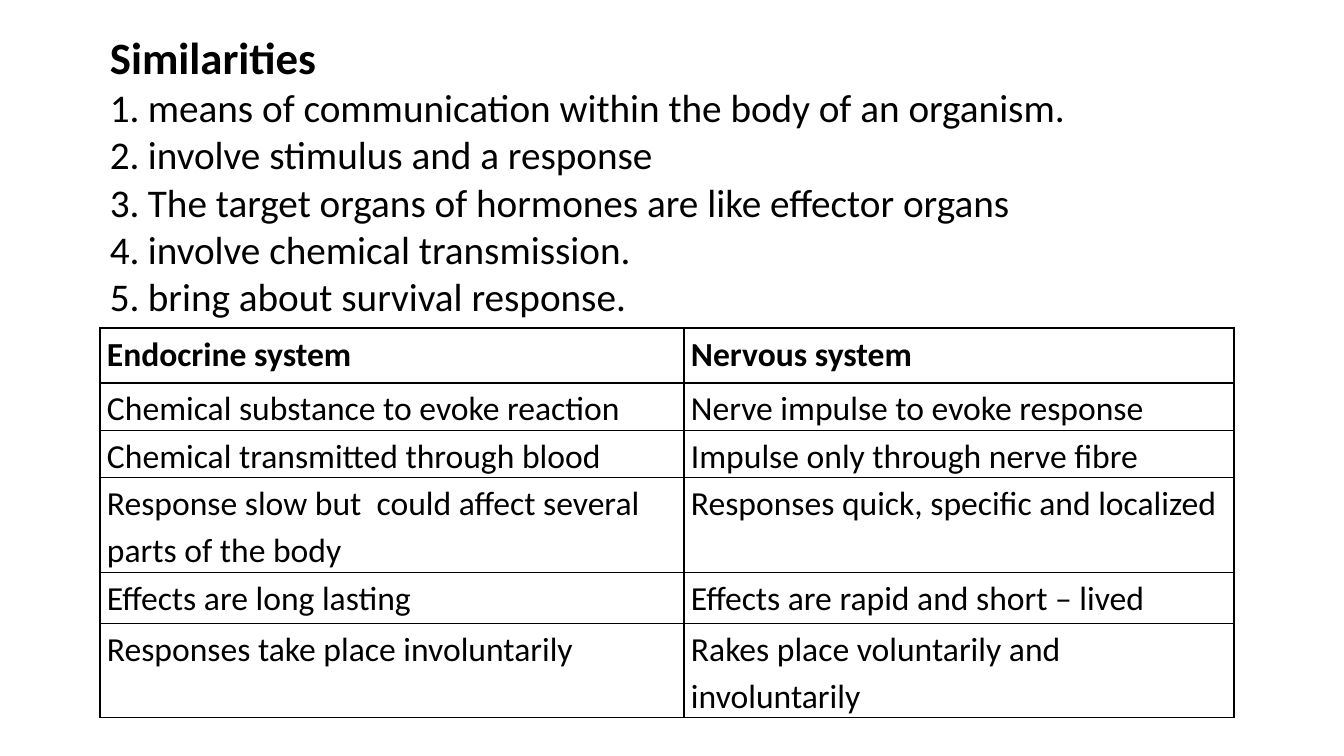
from lxml import etree
from pptx import Presentation
from pptx import util as u
from pptx.dml.color import RGBColor
from pptx.enum import text
from pptx.oxml.ns import qn

HEADING = "Similarities"
SIMILARITIES = [
    "means of communication within the body of an organism.",
    "involve stimulus and a response",
    "The target organs of hormones are like effector organs",
    "involve chemical transmission.",
    "bring about survival response.",
]
DIFFERENCES = [
    ("Endocrine system", "Nervous system"),
    ("Chemical substance to evoke reaction", "Nerve impulse to evoke response"),
    ("Chemical transmitted through blood", "Impulse only through nerve fibre"),
    ("Response slow but  could affect several parts of the body",
     "Responses quick, specific and localized"),
    ("Effects are long lasting", "Effects are rapid and short – lived"),
    ("Responses take place involuntarily", "Rakes place voluntarily and involuntarily"),
]
COLUMN_WIDTHS = [584, 550]
ROW_HEIGHTS = [55, 47, 47, 95, 51, 94]
LEFT, TABLE_TOP = 100, 328
BOX_TOP, BOX_WIDTH, BOX_HEIGHT = 25, 1188, 302
NUMBER_INDENT, CELL_MARGIN = 38, 7

FONT = "Calibri"
BLACK = RGBColor(0, 0, 0)


def px(length):
    return u.Emu(round(length * 914400 / 100.8))


def style(para, size, bold=False):
    para.font.name = FONT
    para.font.size = u.Pt(size)
    para.font.bold = bold
    para.font.color.rgb = BLACK


def number(para):
    props = para._p.get_or_add_pPr()
    props.set("marL", str(px(NUMBER_INDENT)))
    props.set("indent", str(-px(NUMBER_INDENT)))
    bullet = etree.Element(qn("a:buAutoNum"), type="arabicPeriod")
    props.insert_element_before(bullet, "a:tabLst", "a:defRPr", "a:extLst")


def add_borders(cell):
    props = cell._tc.get_or_add_tcPr()
    for position, side in enumerate(("lnL", "lnR", "lnT", "lnB")):
        line = etree.Element(qn(f"a:{side}"), w=str(u.Pt(1)))
        fill = etree.SubElement(line, qn("a:solidFill"))
        etree.SubElement(fill, qn("a:srgbClr"), val=str(BLACK))
        props.insert(position, line)


def add_differences(page):
    frame = page.shapes.add_table(
        len(DIFFERENCES), len(COLUMN_WIDTHS), px(LEFT), px(TABLE_TOP),
        px(sum(COLUMN_WIDTHS)), px(sum(ROW_HEIGHTS)))
    table = frame.table
    table.horz_banding = False
    for column, width in zip(table.columns, COLUMN_WIDTHS):
        column.width = px(width)
    for index, (row, height, words) in enumerate(
            zip(table.rows, ROW_HEIGHTS, DIFFERENCES)):
        row.height = px(height)
        for cell, wording in zip(row.cells, words):
            cell.text = wording
            cell.margin_left = cell.margin_right = px(CELL_MARGIN)
            cell.margin_top = cell.margin_bottom = 0
            cell.fill.background()
            add_borders(cell)
            para = cell.text_frame.paragraphs[0]
            para.line_spacing = 1.15
            style(para, 24, bold=index == 0)


def add_similarities(page):
    box = page.shapes.add_textbox(
        px(LEFT), px(BOX_TOP), px(BOX_WIDTH), px(BOX_HEIGHT))
    frame = box.text_frame
    frame.word_wrap = True
    frame.auto_size = text.MSO_AUTO_SIZE.SHAPE_TO_FIT_TEXT
    heading = frame.paragraphs[0]
    heading.text = HEADING
    style(heading, 32, bold=True)
    for similarity in SIMILARITIES:
        para = frame.add_paragraph()
        para.text = similarity
        style(para, 28)
        number(para)


def main():
    deck = Presentation()
    deck.slide_width, deck.slide_height = px(1344), px(756)
    page = deck.slides.add_slide(deck.slide_layouts[6])
    add_differences(page)
    add_similarities(page)
    deck.save("out.pptx")


if __name__ == "__main__":
    main()
